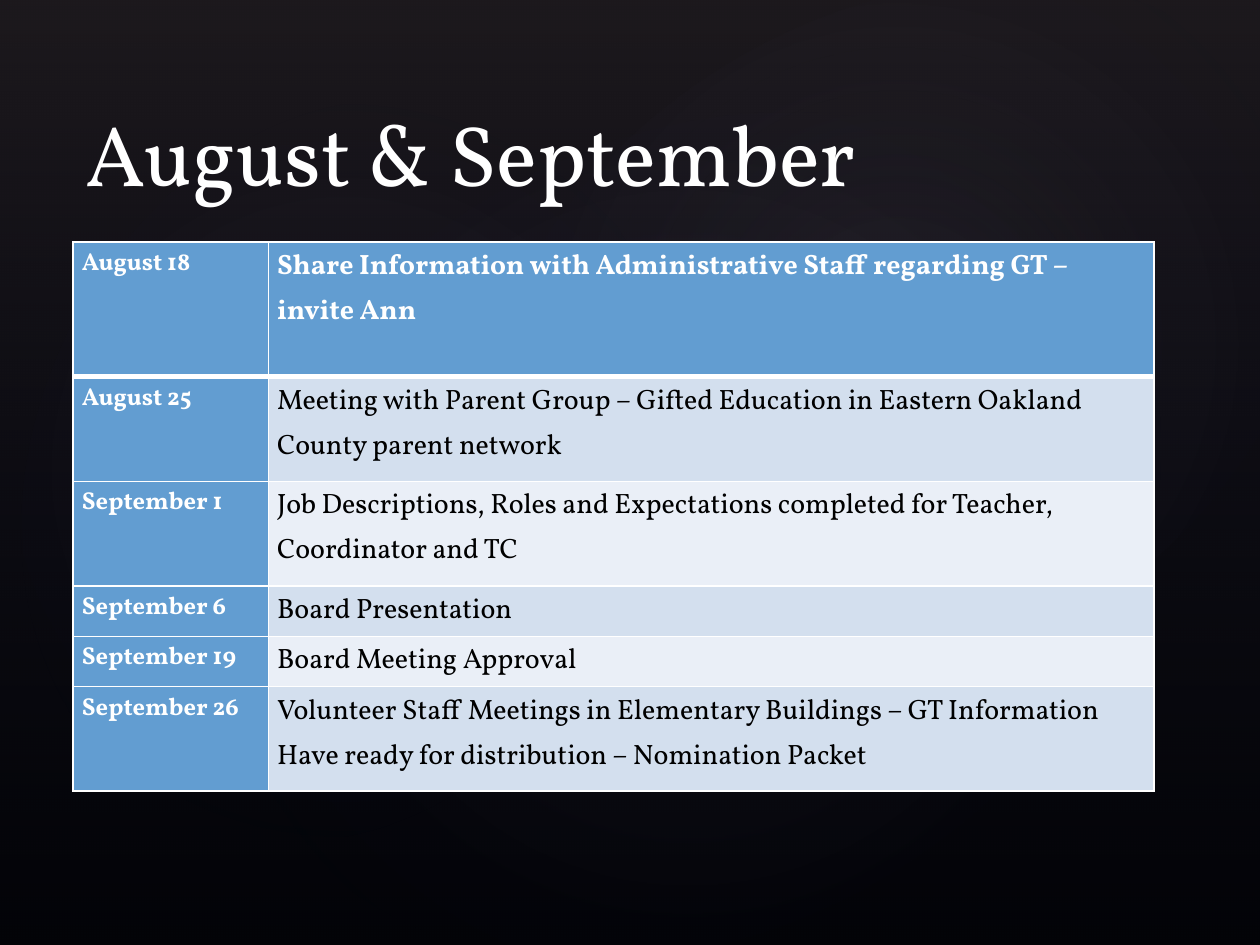
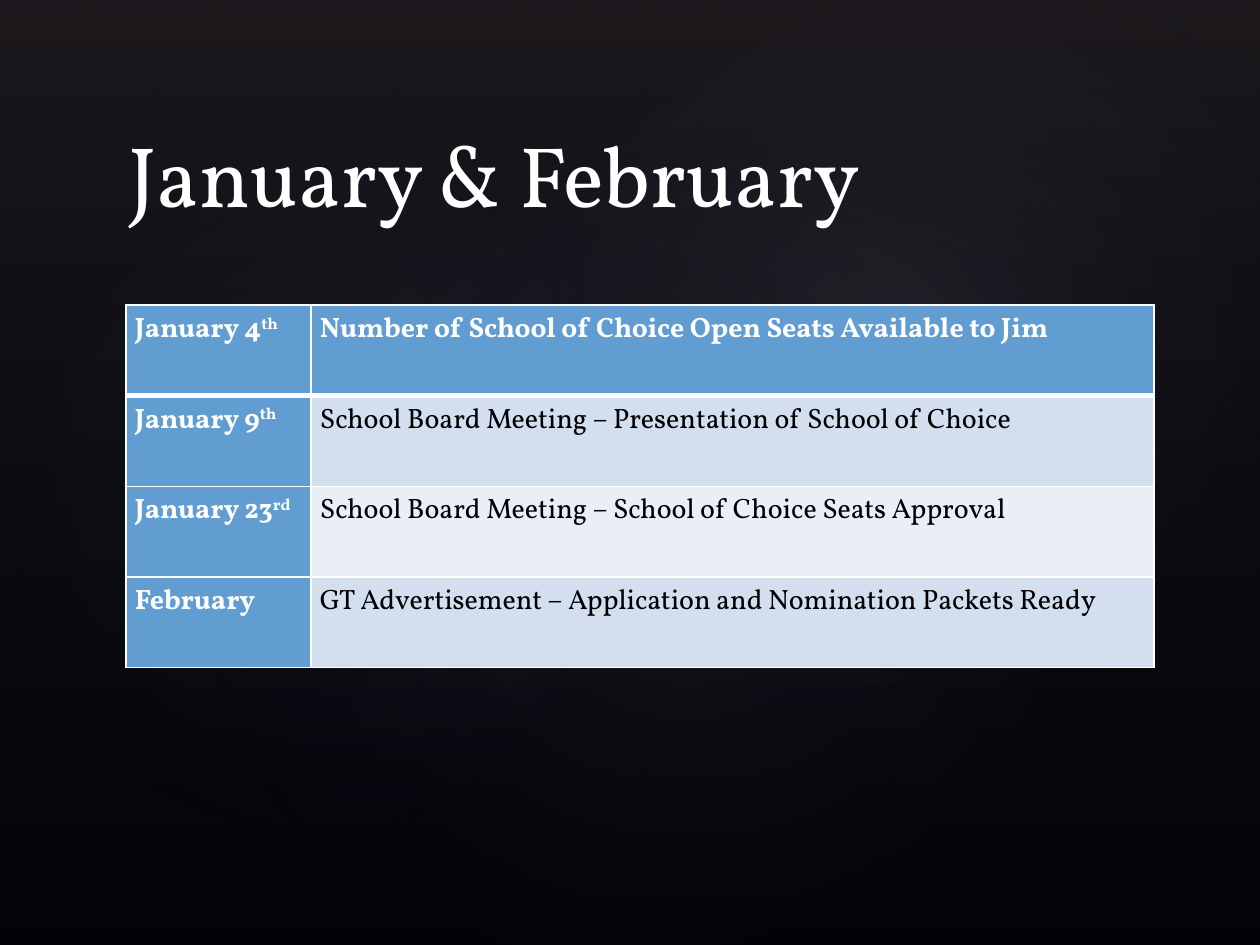
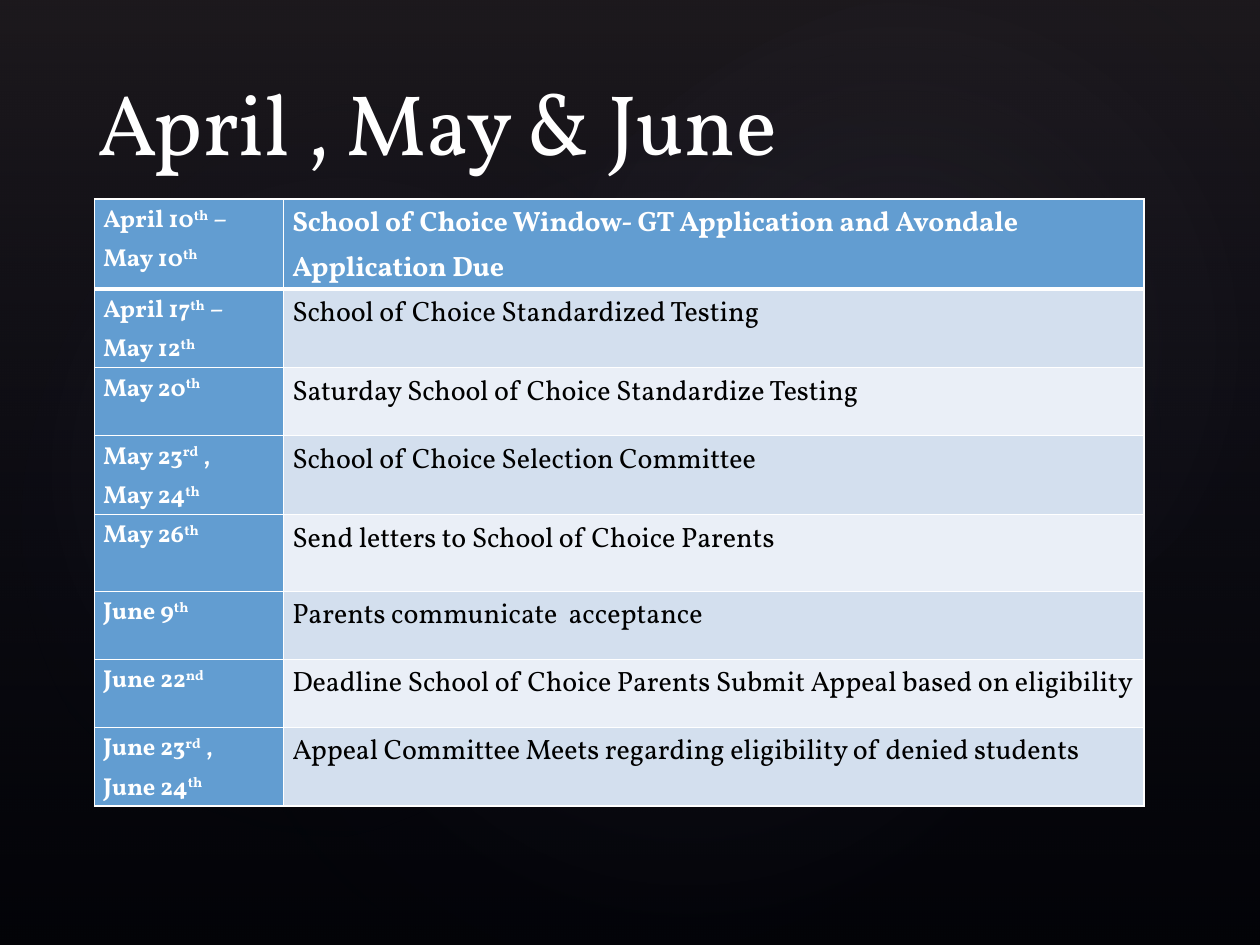
from pptx import Presentation
from pptx.dml.color import RGBColor
from pptx.enum.shapes import MSO_SHAPE as SHAPE
from pptx.enum.text import MSO_ANCHOR as ANCHOR, MSO_AUTO_SIZE as AUTO, PP_ALIGN as ALIGN
from pptx.oxml import parse_xml
from pptx.oxml.ns import nsdecls
from pptx.util import Inches, Pt

FONT = "Vollkorn"
BLACK, WHITE, BLUE = "000000", "FFFFFF", "629DD1"
BANDS = ["D3DFEE", "EAEFF7"]
TITLE_SIZE, BODY_SIZE = 49, 16
TITLE_W, TITLE_H = 8.25, 1

LINEAR = '<a:lin ang="5400000" scaled="0"/>'
RADIAL = ('<a:path path="circle"><a:fillToRect l="50000" t="50000" '
          'r="50000" b="50000"/></a:path>')
SHADE = [(0, "504652", 36), (100, "242852", 10)]


def glow(alpha):
    return [(0, "C4BCC6", alpha), (58, "242852", 0)]


BACKDROP = [
    (SHAPE.RECTANGLE, (0, 0, 10, 7.5), 0, SHADE, LINEAR),
    (SHAPE.OVAL, (1.5, 1.14, 7.92, 6.24), 328.7, glow(7), RADIAL),
    (SHAPE.OVAL, (-0.3, 1.28, 6.06, 4.9), 294.3, glow(8), RADIAL),
    (SHAPE.OVAL, (3.58, 0.13, 7.09, 5.2), 328.7, glow(8), RADIAL),
]

SCHEDULES = [
    dict(title="August & September", title_at=(0.58, 0.67), table_at=(0.58, 1.92),
         cols=[1.55, 7.03], date_size=14, rows=[
        (1.07, "August 18",
         "Share Information with Administrative Staff regarding GT – invite Ann"),
        (0.83, "August 25",
         "Meeting with Parent Group – Gifted Education in Eastern Oakland County parent network"),
        (0.83, "September 1",
         "Job Descriptions, Roles and Expectations completed for Teacher, Coordinator and TC"),
        (0.4, "September 6", "Board Presentation"),
        (0.4, "September 19", "Board Meeting Approval"),
        (0.83, "September 26",
         "Volunteer Staff Meetings in Elementary Buildings – GT Information\n"
         "Have ready for distribution – Nomination Packet"),
    ]),
    dict(title="January & February", title_at=(0.92, 0.83), table_at=(1, 2.42),
         cols=[1.47, 6.69], date_size=16, rows=[
        (0.72, "January 4^th", "Number of School of Choice Open Seats Available to Jim"),
        (0.72, "January 9^th", "School Board Meeting – Presentation of School of Choice"),
        (0.72, "January 23^rd", "School Board Meeting – School of Choice Seats Approval"),
        (0.72, "February", "GT Advertisement – Application and Nomination Packets Ready"),
    ]),
    dict(title="April , May & June", title_at=(0.67, 0.42), table_at=(0.75, 1.58),
         cols=[1.5, 6.83], date_size=14, rows=[
        (0.71, "April 10^th^ –\nMay 10^th",
         "School of Choice Window- GT Application and Avondale Application Due"),
        (0.62, "April 17^th^ –\nMay 12^th", "School of Choice Standardized Testing"),
        (0.54, "May 20^th", "Saturday School of Choice Standardize Testing"),
        (0.62, "May 23^rd^ ,\nMay 24^th", "School of Choice Selection Committee"),
        (0.61, "May 26^th", "Send letters to School of Choice Parents"),
        (0.54, "June 9^th", "Parents communicate  acceptance"),
        (0.54, "June 22^nd",
         "Deadline School of Choice Parents Submit Appeal based on eligibility"),
        (0.62, "June 23^rd^ ,\nJune 24^th",
         "Appeal Committee Meets regarding eligibility of denied students"),
    ]),
]


def rgb(color):
    return RGBColor.from_string(color)


def add_run(p, text, size, color, bold=False, raised=False):
    r = p.add_run()
    r.text = text
    r.font.name, r.font.size, r.font.bold = FONT, Pt(size), bold
    r.font.color.rgb = rgb(color)
    if raised:
        r.font._element.set("baseline", "30000")


def set_gradient(sp, stops, direction):
    gs = "".join(
        f'<a:gs pos="{pos * 1000}"><a:srgbClr val="{color}">'
        f'<a:alpha val="{alpha * 1000}"/></a:srgbClr></a:gs>'
        for pos, color, alpha in stops)
    grad = parse_xml(f'<a:gradFill {nsdecls("a")} rotWithShape="1">'
                     f'<a:gsLst>{gs}</a:gsLst>{direction}</a:gradFill>')
    sp.fill.background()
    sp_pr = sp.element.spPr
    sp_pr.replace(sp_pr.find("{*}noFill"), grad)


def build_backdrop(master, slide):
    fill = master.background.fill
    fill.solid()
    fill.fore_color.rgb = rgb(BLACK)
    tree = master.shapes.element
    for i, (kind, box, angle, stops, direction) in enumerate(BACKDROP):
        sp = slide.shapes.add_shape(kind, *map(Inches, box))
        sp.rotation = angle
        sp.shadow.inherit = False
        sp.line.fill.background()
        set_gradient(sp, stops, direction)
        sp.element.nvSpPr.cNvPr.set("id", str(100 + i))
        tree.insert(2 + i, sp.element)


def place_title(slide, text, left, top):
    title = slide.shapes.title
    title.left, title.top = Inches(left), Inches(top)
    title.width, title.height = Inches(TITLE_W), Inches(TITLE_H)
    tf = title.text_frame
    tf.auto_size, tf.word_wrap = AUTO.NONE, True
    tf.vertical_anchor = ANCHOR.BOTTOM
    p = tf.paragraphs[0]
    p.alignment = ALIGN.LEFT
    add_run(p, text, TITLE_SIZE, WHITE)


def set_borders(cell, top, bottom):
    tc_pr = cell._tc.get_or_add_tcPr()
    for side, width in (("L", 1), ("R", 1), ("T", top), ("B", bottom)):
        tc_pr.append(parse_xml(
            f'<a:ln{side} {nsdecls("a")} w="{Pt(width)}"><a:solidFill>'
            f'<a:srgbClr val="{WHITE}"/></a:solidFill></a:ln{side}>'))


def fill_cell(cell, text, size, row, is_date):
    strong = is_date or row == 0
    set_borders(cell, 3 if row == 1 else 1, 3 if row == 0 else 1)
    cell.fill.solid()
    cell.fill.fore_color.rgb = rgb(BLUE if strong else BANDS[(row - 1) % 2])
    cell.margin_left = cell.margin_right = Inches(0.07)
    cell.margin_top = cell.margin_bottom = 0
    tf = cell.text_frame
    for i, line in enumerate(text.split("\n")):
        p = tf.add_paragraph() if i else tf.paragraphs[0]
        p.line_spacing = 1.15
        for j, part in enumerate(line.split("^")):
            add_run(p, part, size, WHITE if strong else BLACK, strong, j % 2 == 1)


def add_schedule(slide, left, top, cols, rows, date_size):
    height = sum(row[0] for row in rows)
    box = map(Inches, (left, top, sum(cols), height))
    table = slide.shapes.add_table(len(rows), len(cols), *box).table
    for col, width in zip(table.columns, cols):
        col.width = Inches(width)
    for i, (row_height, date, event) in enumerate(rows):
        table.rows[i].height = Inches(row_height)
        fill_cell(table.cell(i, 0), date, date_size, i, True)
        fill_cell(table.cell(i, 1), event, BODY_SIZE, i, False)


def main():
    prs = Presentation()
    prs.slide_width, prs.slide_height = Inches(10), Inches(7.5)
    for i, plan in enumerate(SCHEDULES):
        slide = prs.slides.add_slide(prs.slide_layouts[5])
        if i == 0:
            build_backdrop(prs.slide_master, slide)
        add_schedule(slide, *plan["table_at"], plan["cols"], plan["rows"], plan["date_size"])
        place_title(slide, plan["title"], *plan["title_at"])
    prs.save("out.pptx")


if __name__ == "__main__":
    main()
